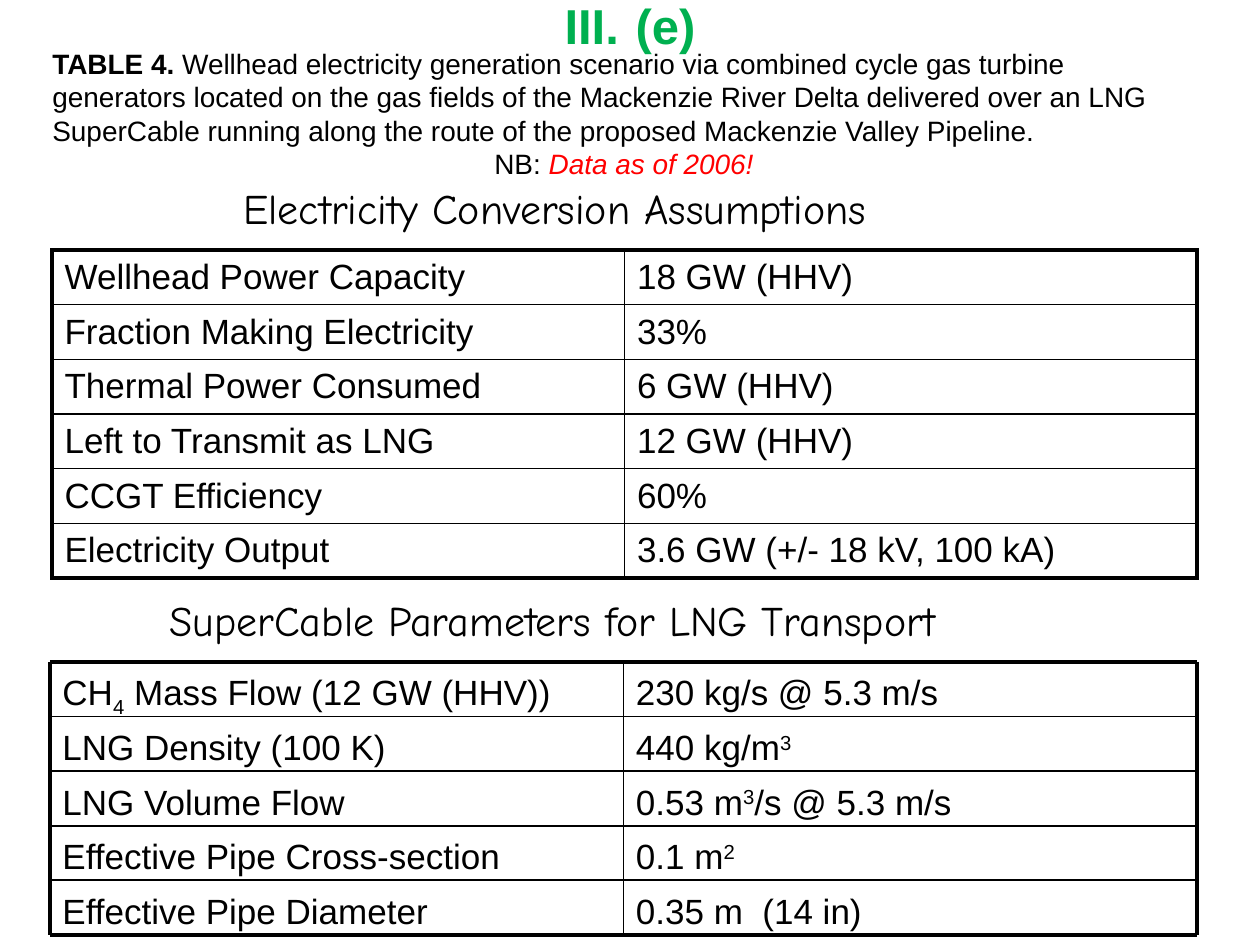
import pptx
import pptx.dml.color
import pptx.enum.shapes
import pptx.enum.text
import pptx.oxml
import pptx.oxml.ns
import pptx.util

SCALE = 914400 / 126
BLACK = "000000"
THICK, THIN = 2.25, 1
CENTER = pptx.enum.text.PP_ALIGN.CENTER
MIDDLE = pptx.enum.text.MSO_ANCHOR.MIDDLE
STRAIGHT = pptx.enum.shapes.MSO_CONNECTOR.STRAIGHT
NAMESPACE = pptx.oxml.ns.nsdecls("a")

ASSUMPTIONS = [
    ("Wellhead Power Capacity", "18 GW (HHV)"),
    ("Fraction Making Electricity", "33%"),
    ("Thermal Power Consumed", "6 GW (HHV)"),
    ("Left to Transmit as LNG", "12 GW (HHV)"),
    ("CCGT Efficiency", "60%"),
    ("Electricity Output", "3.6 GW (+/- 18 kV, 100 kA)"),
]
SUPERSCRIPT, SUBSCRIPT = 30000, -25000
PARAMETERS = [
    ([("CH", 0), ("4", SUBSCRIPT), (" Mass Flow (12 GW (HHV))", 0)], "230 kg/s @ 5.3 m/s"),
    ("LNG Density (100 K)", [("440 kg/m", 0), ("3", SUPERSCRIPT)]),
    ("LNG Volume Flow", [("0.53 m", 0), ("3", SUPERSCRIPT), ("/s @ 5.3 m/s", 0)]),
    ("Effective Pipe Cross-section", [("0.1 m", 0), ("2", SUPERSCRIPT)]),
    ("Effective Pipe Diameter", "0.35 m  (14 in)"),
]


def px(length):
    """Turn a length in px into EMU."""
    return pptx.util.Emu(round(length * SCALE))


def color(value):
    """Turn a hex string into a colour."""
    return pptx.dml.color.RGBColor.from_string(value)


def add_run(paragraph, text, size, value=BLACK, font="Arial", bold=False, italic=False):
    """Append a formatted run to a paragraph."""
    run = paragraph.add_run()
    run.text = text
    run.font.name = font
    run.font.size = pptx.util.Pt(size)
    run.font.bold = bold
    run.font.italic = italic
    run.font.color.rgb = color(value)
    return run


def add_text_frame(slide, box):
    """Add a wrapping text box and return its text frame."""
    text_frame = slide.shapes.add_textbox(*map(px, box)).text_frame
    text_frame.word_wrap = True
    return text_frame


def add_title(slide, box):
    """Add the numbered green title."""
    paragraph = add_text_frame(slide, box).paragraphs[0]
    paragraph.alignment = CENTER
    properties = paragraph._p.get_or_add_pPr()
    properties.set("marL", str(px(71)))
    properties.set("indent", str(px(-71)))
    properties.append(pptx.oxml.parse_xml(
        f'<a:buAutoNum {NAMESPACE} type="romanUcPeriod" startAt="3"/>'))
    add_run(paragraph, "(e)", 28, "00B050", bold=True)


def add_caption(slide, box):
    """Add the table caption and the dated note below it."""
    text_frame = add_text_frame(slide, box)
    caption = text_frame.paragraphs[0]
    add_run(caption, "TABLE 4. ", 16, bold=True)
    add_run(caption, "Wellhead electricity generation scenario via combined cycle gas turbine "
            "generators located on the gas fields of the Mackenzie River Delta delivered over an "
            "LNG SuperCable running along the route of the proposed Mackenzie Valley Pipeline.", 16)
    note = text_frame.add_paragraph()
    note.alignment = CENTER
    add_run(note, "NB: ", 16)
    add_run(note, "Data as of 2006!", 16, "FF0000", italic=True)


def add_heading(slide, box, text):
    """Add a heading above a table."""
    add_run(add_text_frame(slide, box).paragraphs[0], text, 24, font="Comic Neue")


def set_borders(cell, outer_sides):
    """Draw thick borders on the outer sides of a cell and thin ones elsewhere."""
    properties = cell._tc.get_or_add_tcPr()
    for index, side in enumerate("LRTB"):
        width = pptx.util.Pt(THICK if side in outer_sides else THIN)
        properties.insert(index, pptx.oxml.parse_xml(
            f'<a:ln{side} {NAMESPACE} w="{width}"><a:solidFill>'
            f'<a:srgbClr val="{BLACK}"/></a:solidFill></a:ln{side}>'))


def add_assumptions(slide, box, rows):
    """Add a two-column table with a thick frame and equal rows."""
    table = slide.shapes.add_table(len(rows), 2, *map(px, box)).table
    table.first_row = False
    table.horz_banding = False
    for row_index, row in enumerate(rows):
        vertical = {0: "T", len(rows) - 1: "B"}.get(row_index, "")
        for column_index, text in enumerate(row):
            cell = table.cell(row_index, column_index)
            cell.fill.background()
            cell.vertical_anchor = MIDDLE
            add_run(cell.text_frame.paragraphs[0], text, 20)
            set_borders(cell, "LR"[column_index] + vertical)


def add_rule(slide, start, end, width):
    """Add a straight black line without a shadow."""
    line = slide.shapes.add_connector(STRAIGHT, *map(px, start + end))
    line.line.color.rgb = color(BLACK)
    line.line.width = pptx.util.Pt(width)
    line._element.spPr.append(pptx.oxml.parse_xml(f"<a:effectLst {NAMESPACE}/>"))


def add_entry(slide, box, content):
    """Add plain text or a list of runs with baselines."""
    text_frame = add_text_frame(slide, box)
    text_frame.margin_top = px(9)
    pieces = [(content, 0)] if isinstance(content, str) else content
    for text, baseline in pieces:
        run = add_run(text_frame.paragraphs[0], text, 20)
        if baseline:
            run.font._element.set("baseline", str(baseline))


def add_parameters(slide, box, rows):
    """Add a ruled grid of two columns and equal rows."""
    left, top, width, height = box
    row_height, column_width = height / len(rows), width / 2
    for row_index, row in enumerate(rows):
        for column_index, content in enumerate(row):
            add_entry(slide, (left + column_index * column_width, top + row_index * row_height,
                              column_width, row_height), content)
    for index in range(len(rows) + 1):
        y = top + index * row_height
        add_rule(slide, (left, y), (left + width, y), THICK if index in (0, len(rows)) else THIN)
    for index, weight in enumerate((THICK, THIN, THICK)):
        x = left + index * column_width
        add_rule(slide, (x, top), (x, top + height), weight)


def main():
    """Build the slide and save it."""
    presentation = pptx.Presentation()
    presentation.slide_width = px(1260)
    presentation.slide_height = px(945)
    slide = presentation.slides.add_slide(presentation.slide_layouts[6])
    add_heading(slide, (231, 176, 777, 63), "Electricity Conversion Assumptions")
    add_assumptions(slide, (52, 250, 1145, 328), ASSUMPTIONS)
    add_heading(slide, (157, 588, 924, 63), "SuperCable Parameters for LNG Transport")
    add_parameters(slide, (50, 662, 1147, 273), PARAMETERS)
    add_caption(slide, (40, 40, 1168, 149))
    add_title(slide, (315, -11, 630, 72))
    presentation.save("out.pptx")


if __name__ == "__main__":
    main()
